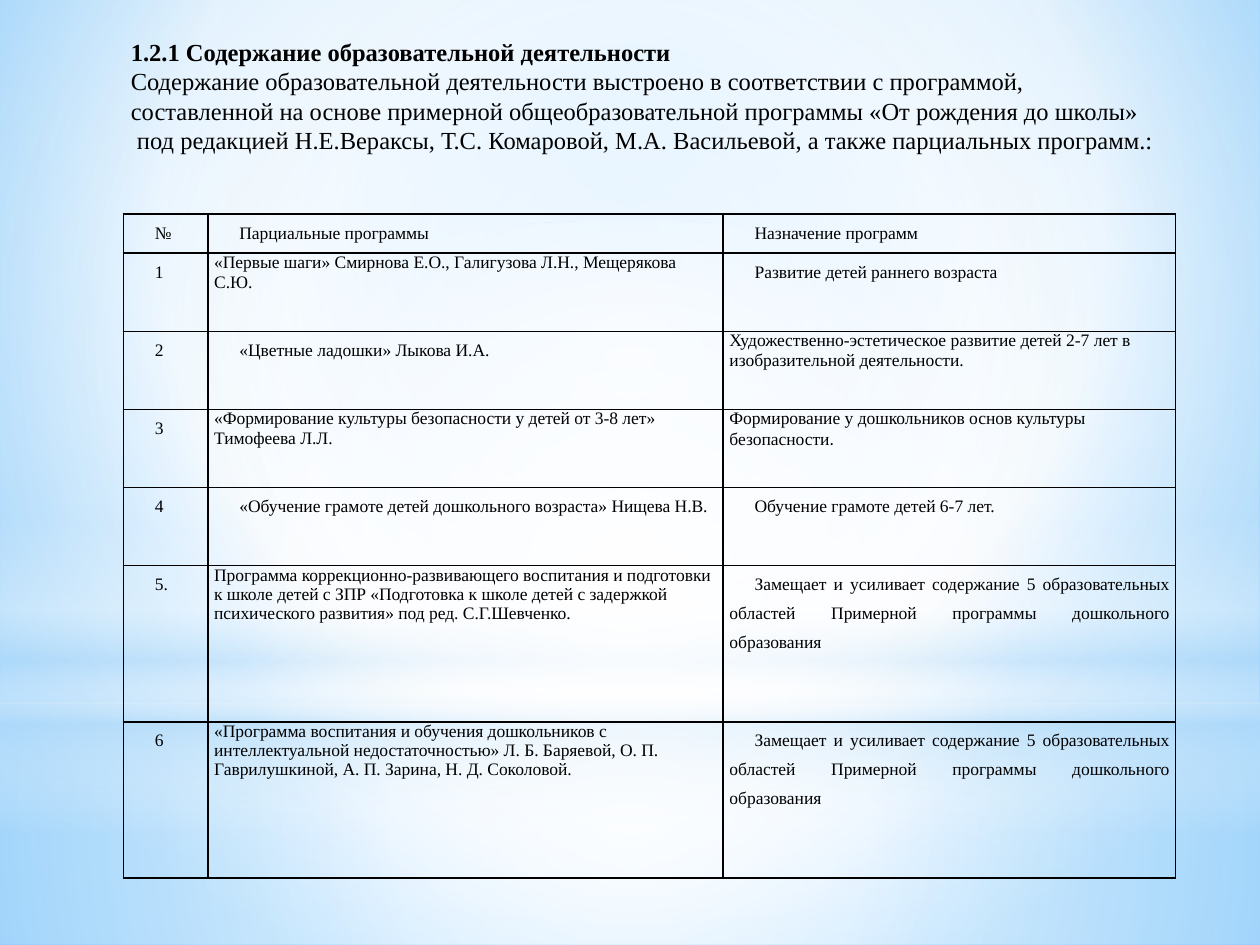
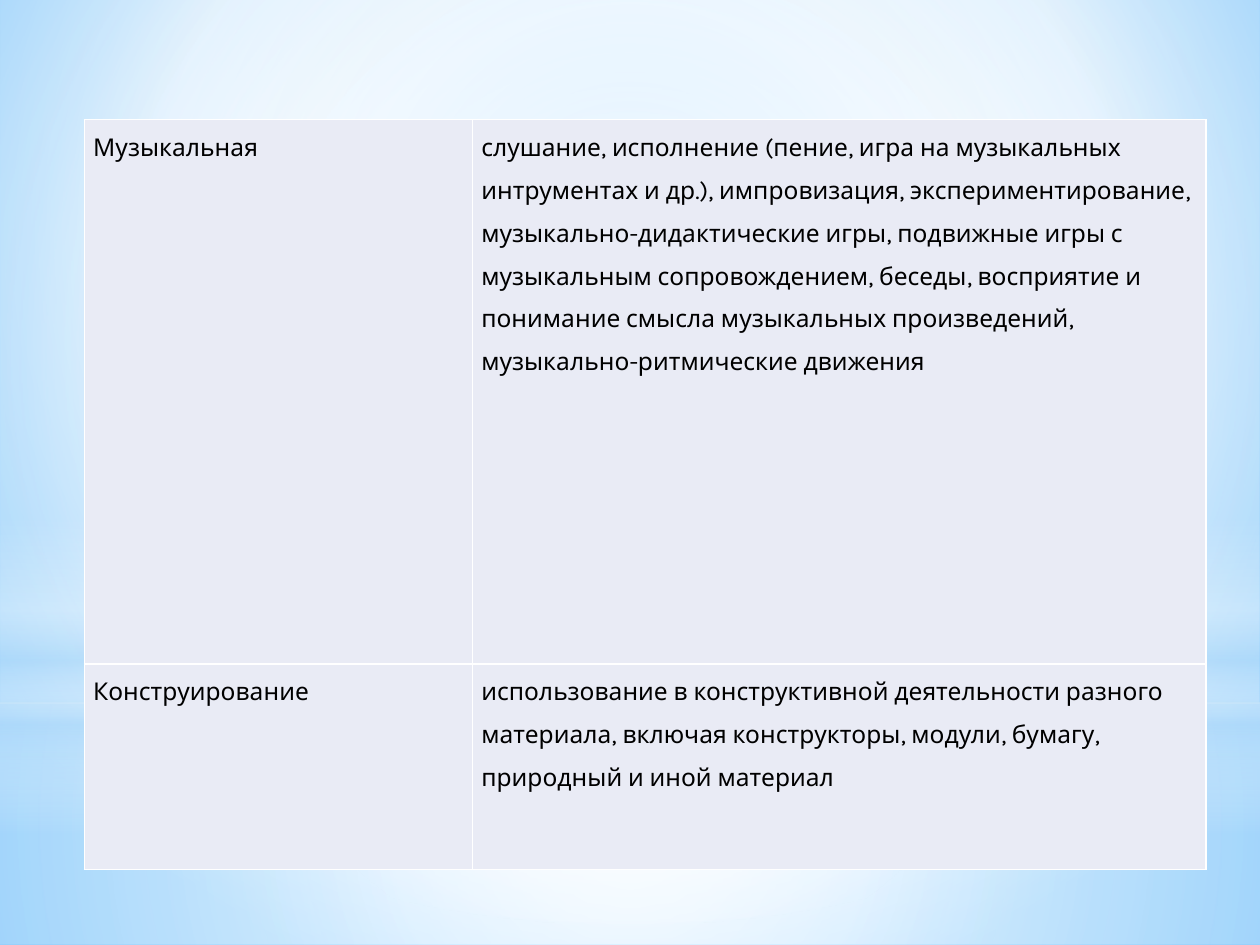
"""Builds two slides on preschool programmes and children's activities."""
import pptx
import pptx.util
import pptx.dml.color
import pptx.enum.shapes
import pptx.enum.text
import pptx.oxml
import pptx.oxml.ns
import lxml.etree

Inches = pptx.util.Inches
Pt = pptx.util.Pt
qn = pptx.oxml.ns.qn
SHAPE = pptx.enum.shapes.MSO_SHAPE
JUST = pptx.enum.text.PP_ALIGN.JUSTIFY

HUES = {"ink": "000000", "white": "FFFFFF", "pale": "B4DCFA",
        "sky": "9ED5FF", "blue": "5BB9FF", "cell": "E9EBF5"}
SERIF, SANS, DOT = "Times New Roman", "Karla", "Calibri"
STEP = 0.2

INTRO = [
    "1.2.1 Содержание образовательной деятельности",
    "Содержание образовательной деятельности выстроено в соответствии с программой, ",
    "составленной на основе примерной общеобразовательной программы «От рождения до школы»",
    " под редакцией Н.Е.Вераксы, Т.С. Комаровой, М.А. Васильевой, а также парциальных программ.:",
]

AREAS = ("Замещает и усиливает содержание 5 образовательных областей "
         "Примерной программы дошкольного образования")
PLANS = [
    ("№", "Парциальные программы", "Назначение программ"),
    ("1", "«Первые шаги» Смирнова Е.О., Галигузова Л.Н., Мещерякова С.Ю.",
     "Развитие детей раннего возраста"),
    ("2", "«Цветные ладошки» Лыкова И.А.",
     "Художественно-эстетическое развитие детей 2-7 лет в изобразительной деятельности."),
    ("3", "«Формирование культуры безопасности у детей от 3-8 лет» Тимофеева Л.Л.",
     [("Формирование у дошкольников основ культуры безопасности", SERIF), (".", DOT)]),
    ("4", "«Обучение грамоте детей дошкольного возраста» Нищева Н.В.",
     "Обучение грамоте детей 6-7 лет."),
    ("5.", "Программа коррекционно-развивающего воспитания и подготовки к школе детей с ЗПР "
     "«Подготовка к школе детей с задержкой психического развития» под ред. С.Г.Шевченко.",
     AREAS),
    ("6", "«Программа воспитания и обучения дошкольников с интеллектуальной недостаточностью» "
     "Л. Б. Баряевой, О. П. Гаврилушкиной, А. П. Зарина, Н. Д. Соколовой.", AREAS),
]
TIGHT = {(1, 1), (2, 2), (3, 1), (3, 2), (5, 1), (6, 1)}

TASKS = [
    ("Музыкальная",
     "слушание, исполнение (пение, игра на музыкальных интрументах и др.), импровизация, "
     "экспериментирование, музыкально-дидактические игры, подвижные игры с музыкальным "
     "сопровождением, беседы, восприятие и понимание смысла музыкальных произведений, "
     "музыкально-ритмические движения"),
    ("Конструирование",
     "использование в конструктивной деятельности разного материала, включая конструкторы, "
     "модули, бумагу, природный и иной материал"),
]

MID = (50, 50, 50, 50)
BACK = [(0, "sky", 100), (60, "white", 100), (100, "blue", 100)]
LAYERS = [
    (SHAPE.RECTANGLE, (0, 5.58, 10, 1.92), MID,
     [(0, "white", 91), (37, "white", 76), (100, "pale", 79)]),
    (SHAPE.RECTANGLE, (0, 0, 10, 5.58), MID,
     [(0, "white", 89), (48, "white", 62), (100, "pale", 79)]),
    (SHAPE.RECTANGLE, (0, 4.12, 10, 2.5), None,
     [(0, "white", 0), (29, "white", 30), (45, "pale", 40),
      (55, "white", 26), (65, "pale", 60), (100, "white", 0)]),
    (SHAPE.OVAL, (0, 1.75, 10, 5.58), MID, [(0, "white", 100), (56, "white", 0)]),
]


def rgb(hue):
    return pptx.dml.color.RGBColor.from_string(HUES[hue])


def sub(top, tag, **attrs):
    return lxml.etree.SubElement(top, qn(tag), {k: str(v) for k, v in attrs.items()})


def blend(props, stops, focus):
    old = props.find(qn("a:solidFill"))
    grad = pptx.oxml.parse_xml(
        f'<a:gradFill {pptx.oxml.ns.nsdecls("a")} rotWithShape="1"/>')
    gs = sub(grad, "a:gsLst")
    for pos, hue, alpha in stops:
        clr = sub(sub(gs, "a:gs", pos=pos * 1000), "a:srgbClr", val=HUES[hue])
        if alpha < 100:
            sub(clr, "a:alpha", val=alpha * 1000)
    if focus:
        ring = sub(grad, "a:path", path="circle")
        sub(ring, "a:fillToRect", **{s: n * 1000 for s, n in zip("ltrb", focus)})
    else:
        sub(grad, "a:lin", ang=90 * 60000, scaled=0)
    props.replace(old, grad)


def start(deck):
    slide = deck.slides.add_slide(deck.slide_layouts[6])
    slide.background.fill.solid()
    blend(slide.element.find(".//" + qn("p:bgPr")), BACK, (20, 10, 20, 60))
    for kind, box, focus, stops in LAYERS:
        shape = slide.shapes.add_shape(kind, *map(Inches, box))
        shape.shadow.inherit = False
        shape.line.fill.background()
        shape.fill.solid()
        blend(shape.element.spPr, stops, focus)
    return slide


def write(para, text, font, size, bold=False):
    for part, face in [(text, font)] if isinstance(text, str) else text:
        run = para.add_run()
        run.text = part
        run.font.name, run.font.size, run.font.bold = face, Pt(size), bold
        run.font.color.rgb = rgb("ink")


def indent(para):
    para.alignment = JUST
    props = para._p.get_or_add_pPr()
    props.set("marL", "0")
    props.set("indent", str(Inches(STEP)))


def edge(cell, hue):
    props = cell._tc.get_or_add_tcPr()
    for spot, side in enumerate("LRTB"):
        line = sub(props, "a:ln" + side, w=Pt(1))
        sub(sub(line, "a:solidFill"), "a:srgbClr", val=HUES[hue])
        props.insert(spot, line)


def grid(slide, rows, place, wide, tall, font, size, pad, rim, fill=None, inset=False):
    frame = slide.shapes.add_table(len(rows), len(wide), *map(Inches, place),
                                   Inches(sum(wide)), Inches(sum(tall)))
    table = frame.table
    table.first_row = table.horz_banding = False
    for col, size_in in zip(table.columns, wide):
        col.width = Inches(size_in)
    for row, size_in in zip(table.rows, tall):
        row.height = Inches(size_in)
    for r, row in enumerate(rows):
        for c, text in enumerate(row):
            cell = table.cell(r, c)
            cell.margin_left = cell.margin_right = Inches(pad)
            cell.margin_top = cell.margin_bottom = 0
            if fill:
                cell.fill.solid()
                cell.fill.fore_color.rgb = rgb(fill)
            else:
                cell.fill.background()
            edge(cell, rim)
            para = cell.text_frame.paragraphs[0]
            write(para, text, font, size)
            if not inset or (r, c) not in TIGHT:
                para.line_spacing = 1.5
                if inset:
                    indent(para)


def intro(slide):
    frame = slide.shapes.add_textbox(*map(Inches, (0.74, 0.24, 8.53, 1.04))).text_frame
    frame.word_wrap = False
    frame.auto_size = pptx.enum.text.MSO_AUTO_SIZE.SHAPE_TO_FIT_TEXT
    frame.vertical_anchor = pptx.enum.text.MSO_ANCHOR.MIDDLE
    for n, text in enumerate(INTRO):
        para = frame.add_paragraph() if n else frame.paragraphs[0]
        indent(para)
        write(para, text, SERIF, 14, bold=n == 0)


def main():
    deck = pptx.Presentation()
    deck.slide_width, deck.slide_height = Inches(10), Inches(7.5)
    slide = start(deck)
    grid(slide, PLANS, (0.98, 1.7), (0.67, 4.09, 3.59), [0.31] + [0.62] * 4 + [1.24] * 2,
         SERIF, 10, 0.05, "ink", inset=True)
    intro(slide)
    grid(start(deck), TASKS, (0.67, 0.95), (3.08, 5.82), (4.32, 1.63),
         SANS, 14, 0.07, "white", fill="cell")
    deck.save("out.pptx")


if __name__ == "__main__":
    main()
